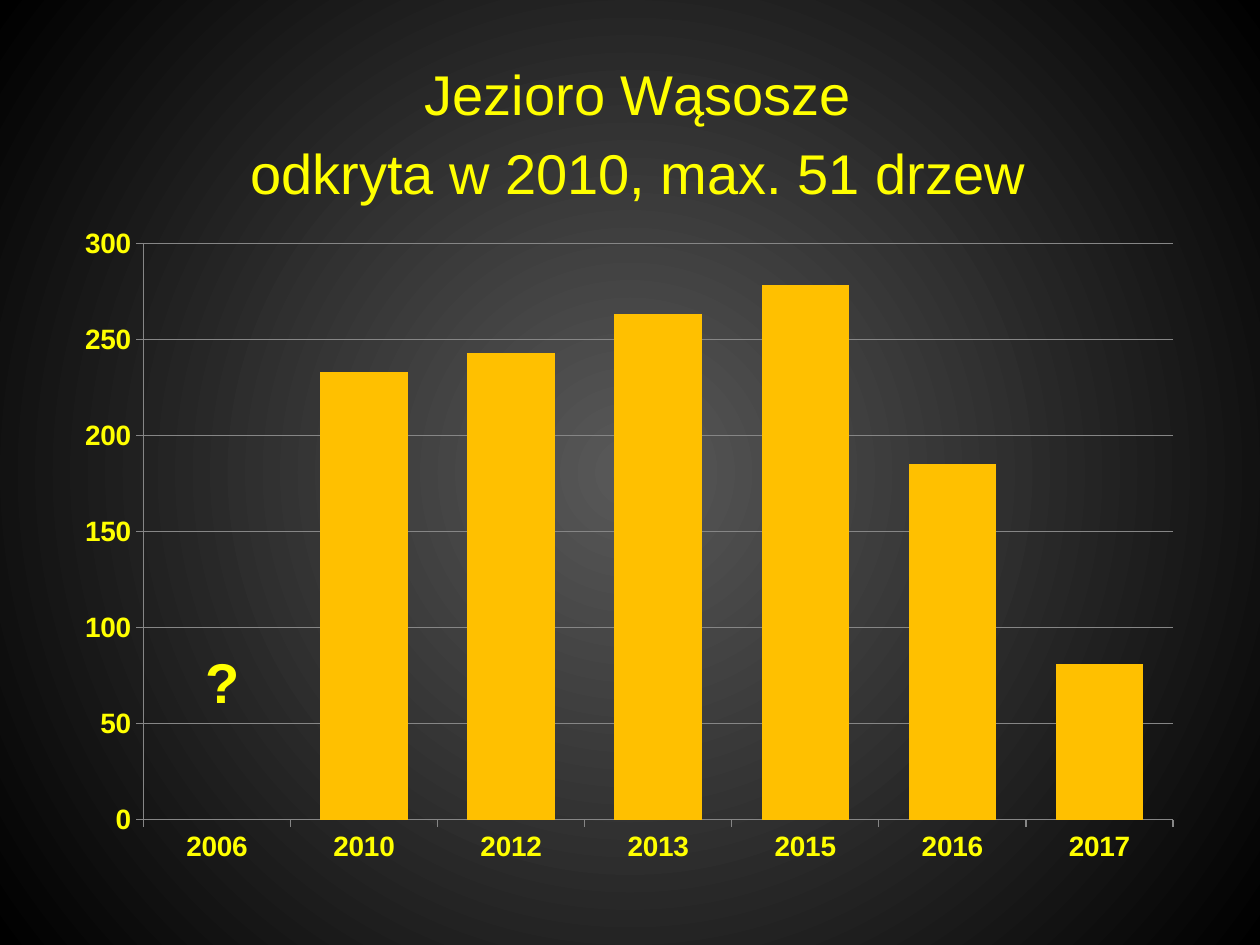
from lxml import etree
from pptx import Presentation
from pptx.chart.data import CategoryChartData
from pptx.dml.color import RGBColor
from pptx.enum.chart import XL_CHART_TYPE, XL_TICK_MARK
from pptx.enum.text import MSO_ANCHOR, PP_ALIGN
from pptx.oxml import parse_xml
from pptx.oxml.ns import nsdecls, qn
from pptx.util import Inches, Pt

COLUMN = XL_CHART_TYPE.COLUMN_CLUSTERED
OUTSIDE = XL_TICK_MARK.OUTSIDE
CENTER = PP_ALIGN.CENTER
TOP = MSO_ANCHOR.TOP

COLORS = {"text": "FFFF00", "bar": "FFC000", "line": "868686",
          "glow": "595959", "edge": "000000"}
FONT = "Arial"
TITLE_LINES = ["Jezioro Wąsosze", "odkryta w 2010, max. 51 drzew"]
TREES = {"2006": None, "2010": 233, "2012": 243, "2013": 263,
         "2015": 278, "2016": 185, "2017": 81}
TITLE_BOX = (1.22, 0.39, 7.69, 1.23)
CHART_BOX = (0.51, 1.72, 8.98, 5.26)
UNKNOWN_BOX = (1.53, 5.09, 0.48, 0.64)
PLOT_LAYOUT = {"x": 0.07, "y": 0.04, "w": 0.91, "h": 0.87}


def color(name):
    return RGBColor.from_string(COLORS[name])


def style_font(font, size, bold):
    font.name = FONT
    font.size = Pt(size)
    font.bold = bold
    font.color.rgb = color("text")


def style_line(line):
    line.color.rgb = color("line")
    line.width = Pt(0.75)


def set_background(slide):
    slide.background.fill.solid()
    properties = slide.element.cSld.find(qn("p:bg")).find(qn("p:bgPr"))
    properties.replace(properties[0], parse_xml(
        f'<a:gradFill {nsdecls("a")} rotWithShape="1"><a:gsLst>'
        f'<a:gs pos="0"><a:srgbClr val="{COLORS["glow"]}"/></a:gs>'
        f'<a:gs pos="100000"><a:srgbClr val="{COLORS["edge"]}"/></a:gs>'
        '</a:gsLst><a:path path="circle">'
        '<a:fillToRect l="50000" t="50000" r="50000" b="50000"/>'
        '</a:path></a:gradFill>'))


def add_title(slide):
    title = slide.shapes.title
    title.left, title.top, title.width, title.height = map(Inches, TITLE_BOX)
    frame = title.text_frame
    frame.word_wrap = True
    frame.vertical_anchor = TOP
    frame.margin_top = Inches(0.08)
    frame.text = "\n".join(TITLE_LINES)
    for index, paragraph in enumerate(frame.paragraphs):
        paragraph.alignment = CENTER
        paragraph.line_spacing = 1.0
        paragraph.space_before = Pt(7 if index else 0)
        style_font(paragraph.font, 32, False)


def set_plot_layout(chart):
    plot_area = chart.element.find(qn("c:chart")).find(qn("c:plotArea"))
    layout = plot_area.find(qn("c:layout"))
    if layout is not None:
        plot_area.remove(layout)
    layout = etree.Element(qn("c:layout"))
    manual = etree.SubElement(layout, qn("c:manualLayout"))
    settings = {"layoutTarget": "inner", "xMode": "edge", "yMode": "edge",
                **PLOT_LAYOUT}
    for name, value in settings.items():
        etree.SubElement(manual, qn(f"c:{name}")).set("val", str(value))
    plot_area.insert(0, layout)


def add_tree_chart(slide):
    data = CategoryChartData()
    data.categories = list(TREES)
    data.add_series("Series 1", list(TREES.values()))
    chart = slide.shapes.add_chart(COLUMN, *map(Inches, CHART_BOX), data).chart
    chart.has_title = False
    chart.has_legend = False
    style_font(chart.font, 16, True)
    plot = chart.plots[0]
    plot.gap_width = 68
    plot.vary_by_categories = False
    fill = plot.series[0].format.fill
    fill.solid()
    fill.fore_color.rgb = color("bar")
    for axis in (chart.category_axis, chart.value_axis):
        axis.major_tick_mark = OUTSIDE
        style_line(axis.format.line)
    chart.value_axis.minimum_scale = 0
    chart.value_axis.maximum_scale = 300
    chart.value_axis.major_unit = 50
    style_line(chart.value_axis.major_gridlines.format.line)
    set_plot_layout(chart)


def add_unknown_mark(slide):
    frame = slide.shapes.add_textbox(*map(Inches, UNKNOWN_BOX)).text_frame
    frame.word_wrap = False
    frame.text = "?"
    style_font(frame.paragraphs[0].font, 32, True)


def main():
    presentation = Presentation()
    presentation.slide_width = Inches(10)
    presentation.slide_height = Inches(7.5)
    slide = presentation.slides.add_slide(presentation.slide_layouts[5])
    set_background(slide)
    add_title(slide)
    add_tree_chart(slide)
    add_unknown_mark(slide)
    presentation.save("out.pptx")


if __name__ == "__main__":
    main()
